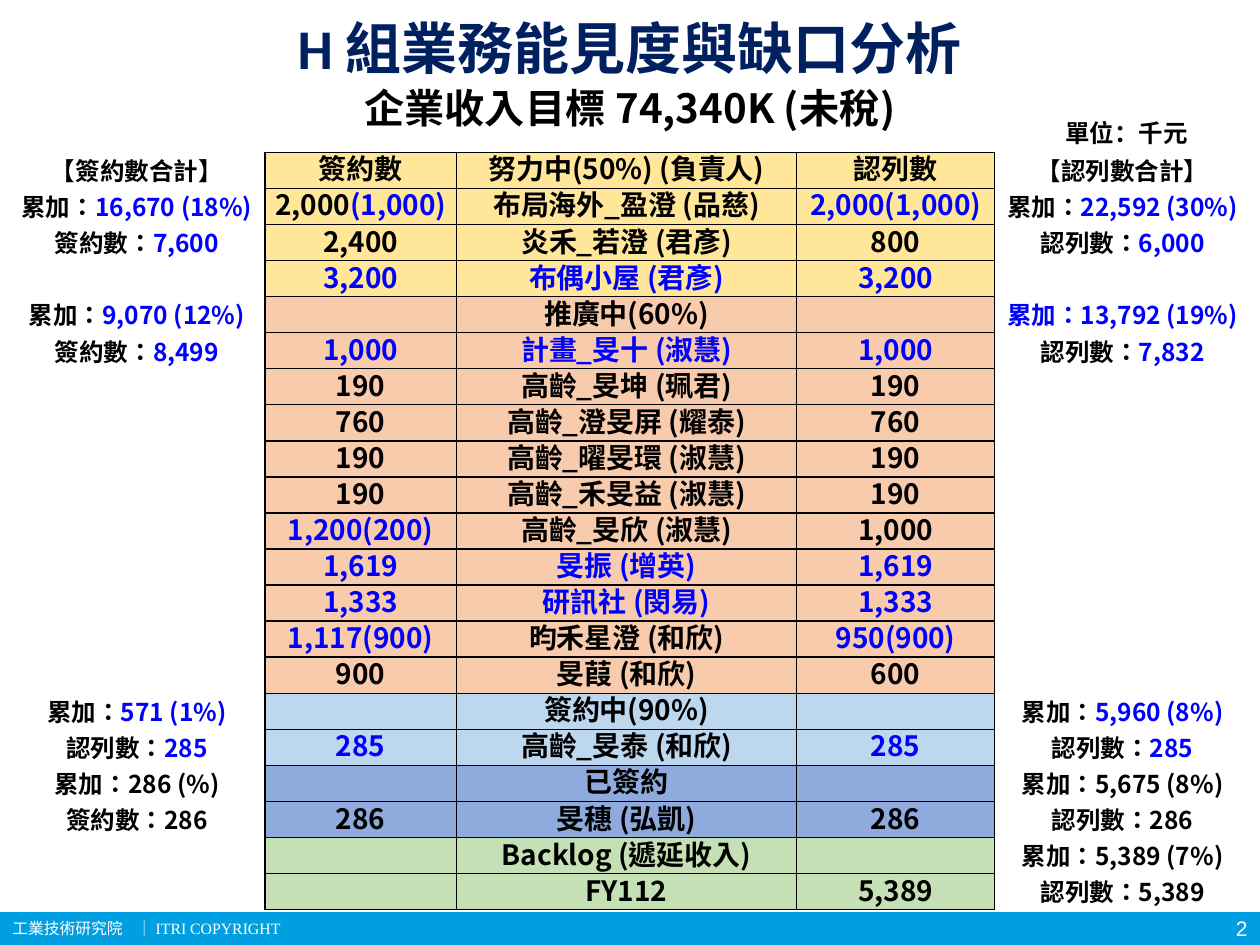
import pptx
import pptx.dml.color
import pptx.enum.shapes
import pptx.enum.text
import pptx.oxml
import pptx.oxml.ns
import pptx.util
from lxml import etree

Cm, Pt = pptx.util.Cm, pptx.util.Pt
ALIGN = pptx.enum.text.PP_ALIGN
MIDDLE = pptx.enum.text.MSO_ANCHOR.MIDDLE

THEME = {
    "navy": "002060", "black": "000000", "blue": "0000FF", "white": "FFFFFF",
    "band": "009FE2", "yellow": "FFE699", "orange": "F8CBAD",
    "sky": "BDD7EE", "indigo": "8FAADC", "green": "C5E0B4",
    "title_size": 32, "subtitle_size": 23, "unit_size": 14, "footer_size": 9,
    "number_size": 12, "total_size": 14, "detail_size": 16, "line_size": 20,
    "cjk": "Noto Sans CJK TC", "unit_font": "Noto Sans CJK SC",
    "title_font": "Calibri", "footer_font": "Times New Roman", "number_font": "Arial",
}

# Text boxes: text, (left, top, width, height) in cm, size, font, colour, bold, alignment
TEXT_BOXES = [
    ("2", (23.93, 18.39, 1.47, 0.66), "number_size", "number_font", "white", False, ALIGN.RIGHT),
    ("工業技術研究院\t│ ITRI COPYRIGHT", (0, 18.2, 22.71, 1.02),
     "footer_size", "footer_font", "white", False, ALIGN.LEFT),
    ("H 組業務能見度與缺口分析", (0, 0.2, 25.4, 1.5),
     "title_size", "title_font", "navy", True, ALIGN.CENTER),
    ("企業收入目標 74,340K (未稅)", (1.19, 1.55, 23.01, 1.24),
     "subtitle_size", "cjk", "black", True, ALIGN.CENTER),
    ("單位：千元", (21.21, 2.24, 3, 0.86), "unit_size", "unit_font", "black", True, ALIGN.CENTER),
]
FOOTER_TAB = Cm(2.5)

# Rows by stage: signed total, signed, project, recognised, recognised total.
# Text after "|" is blue.
STAGES = [
    ("yellow", [
        ("【簽約數合計】", "簽約數", "努力中(50%) (負責人)", "認列數", "【認列數合計】"),
        ("累加：|16,670 (18%)", "2,000|(1,000)", "布局海外_盈澄 (品慈)", "|2,000(1,000)",
         "累加：|22,592 (30%)"),
        ("簽約數：|7,600", "2,400", "炎禾_若澄 (君彥)", "800", "認列數：|6,000"),
        ("", "|3,200", "|布偶小屋 (君彥)", "|3,200", ""),
    ]),
    ("orange", [
        ("累加：|9,070 (12%)", "", "推廣中(60%)", "", "|累加：13,792 (19%)"),
        ("簽約數：|8,499", "|1,000", "|計畫_旻十 (淑慧)", "|1,000", "認列數：|7,832"),
        ("", "190", "高齡_旻坤 (珮君)", "190", ""),
        ("", "760", "高齡_澄旻屏 (耀泰)", "760", ""),
        ("", "190", "高齡_曜旻環 (淑慧)", "190", ""),
        ("", "190", "高齡_禾旻益 (淑慧)", "190", ""),
        ("", "|1,200(200)", "高齡_旻欣 (淑慧)", "1,000", ""),
        ("", "|1,619", "|旻振 (增英)", "|1,619", ""),
        ("", "|1,333", "|研訊社 (閔易)", "|1,333", ""),
        ("", "|1,117(900)", "昀禾星澄 (和欣)", "|950(900)", ""),
        ("", "900", "旻葭 (和欣)", "600", ""),
    ]),
    ("sky", [
        ("累加：|571 (1%)", "", "簽約中(90%)", "", "累加：|5,960 (8%)"),
        ("認列數：|285", "|285", "高齡_旻泰 (和欣)", "|285", "認列數：|285"),
    ]),
    ("indigo", [
        ("累加：286 (%)", "", "已簽約", "", "累加：5,675 (8%)"),
        ("簽約數：286", "286", "旻穗 (弘凱)", "286", "認列數：286"),
    ]),
    ("green", [
        ("", "", "Backlog (遞延收入)", "", "累加：5,389 (7%)"),
        ("", "", "FY112", "5,389", "認列數：5,389"),
    ]),
]
COLUMN_WIDTHS = [5.16, 3.86, 6.86, 3.99, 5.16]
TABLE_LEFT, TABLE_TOP, TABLE_HEIGHT = 0.18, 3.07, 15.27
ALL_SIDES = ("L", "R", "T", "B")


def color(name):
    return pptx.dml.color.RGBColor.from_string(THEME[name])


def format_run(run, size, font, color_name, bold):
    run.font.size = Pt(THEME[size])
    run.font.name = THEME[font]
    run.font.bold = bold
    run.font.color.rgb = color(color_name)
    properties = run.font._element
    if font == "cjk":
        properties.set("lang", "zh-TW")
    east_asian = etree.SubElement(properties, pptx.oxml.ns.qn("a:ea"))
    east_asian.set("typeface", THEME["unit_font" if font == "unit_font" else "cjk"])


def add_text(slide, text, place, size, font, color_name, bold, alignment):
    shape = slide.shapes.add_textbox(*(Cm(value) for value in place))
    frame = shape.text_frame
    frame.word_wrap = True
    frame.vertical_anchor = MIDDLE
    frame.margin_top = frame.margin_bottom = 0
    frame.text = text
    paragraph = frame.paragraphs[0]
    paragraph.alignment = alignment
    if "\t" in text:
        tabs = etree.SubElement(paragraph._p.get_or_add_pPr(), pptx.oxml.ns.qn("a:tabLst"))
        etree.SubElement(tabs, pptx.oxml.ns.qn("a:tab"), pos=str(FOOTER_TAB), algn="l")
    for run in paragraph.runs:
        format_run(run, size, font, color_name, bold)


def set_borders(cell, sides):
    properties = cell._tc.get_or_add_tcPr()
    for side in ALL_SIDES:
        line = etree.SubElement(properties, pptx.oxml.ns.qn(f"a:ln{side}"), w=str(Pt(1)))
        if side in sides:
            fill = etree.SubElement(line, pptx.oxml.ns.qn("a:solidFill"))
            etree.SubElement(fill, pptx.oxml.ns.qn("a:srgbClr"), val=THEME["black"])
        else:
            etree.SubElement(line, pptx.oxml.ns.qn("a:noFill"))


def fill_cell(cell, text, size, fill_name, sides):
    set_borders(cell, sides)
    cell.fill.solid()
    cell.fill.fore_color.rgb = color(fill_name)
    cell.vertical_anchor = MIDDLE
    cell.margin_left = cell.margin_right = Cm(0.03)
    cell.margin_top = cell.margin_bottom = 0
    paragraph = cell.text_frame.paragraphs[0]
    paragraph.alignment = ALIGN.CENTER
    paragraph.line_spacing = Pt(THEME["line_size"])
    black_text, _, blue_text = text.partition("|")
    for part, color_name in ((black_text, "black"), (blue_text, "blue")):
        if part:
            run = paragraph.add_run()
            run.text = part
            format_run(run, size, "cjk", color_name, True)
    if not text:
        end = etree.SubElement(paragraph._p, pptx.oxml.ns.qn("a:endParaRPr"))
        end.set("sz", str(THEME["total_size"] * 100))


def add_visibility_table(slide):
    rows = [(fill, row) for fill, stage_rows in STAGES for row in stage_rows]
    last = len(COLUMN_WIDTHS) - 1
    table = slide.shapes.add_table(
        len(rows), len(COLUMN_WIDTHS), Cm(TABLE_LEFT), Cm(TABLE_TOP),
        Cm(sum(COLUMN_WIDTHS)), Cm(TABLE_HEIGHT)).table
    table.first_row = table.horz_banding = False
    for column, width in zip(table.columns, COLUMN_WIDTHS):
        column.width = Cm(width)
    outer_sides = {0: ("R",), last: ("L",)}
    for row_index, (stage_fill, texts) in enumerate(rows):
        table.rows[row_index].height = Cm(TABLE_HEIGHT / len(rows))
        for column_index, text in enumerate(texts):
            outer = column_index in outer_sides
            fill_cell(table.cell(row_index, column_index), text,
                      "total_size" if outer else "detail_size",
                      "white" if outer else stage_fill,
                      outer_sides.get(column_index, ALL_SIDES))


def main():
    presentation = pptx.Presentation()
    presentation.slide_width, presentation.slide_height = Cm(25.4), Cm(19.05)
    slide = presentation.slides.add_slide(presentation.slide_layouts[6])

    # Footer band
    band = slide.shapes.add_shape(pptx.enum.shapes.MSO_SHAPE.RECTANGLE,
                                  0, Cm(18.39), Cm(25.4), Cm(0.66))
    band.shadow.inherit = False
    band.fill.solid()
    band.fill.fore_color.rgb = color("band")
    band.line.fill.background()

    # Footer, headings and unit
    for text_box in TEXT_BOXES:
        add_text(slide, *text_box)

    # Signed and recognised amounts by stage
    add_visibility_table(slide)
    presentation.save("out.pptx")


if __name__ == "__main__":
    main()
